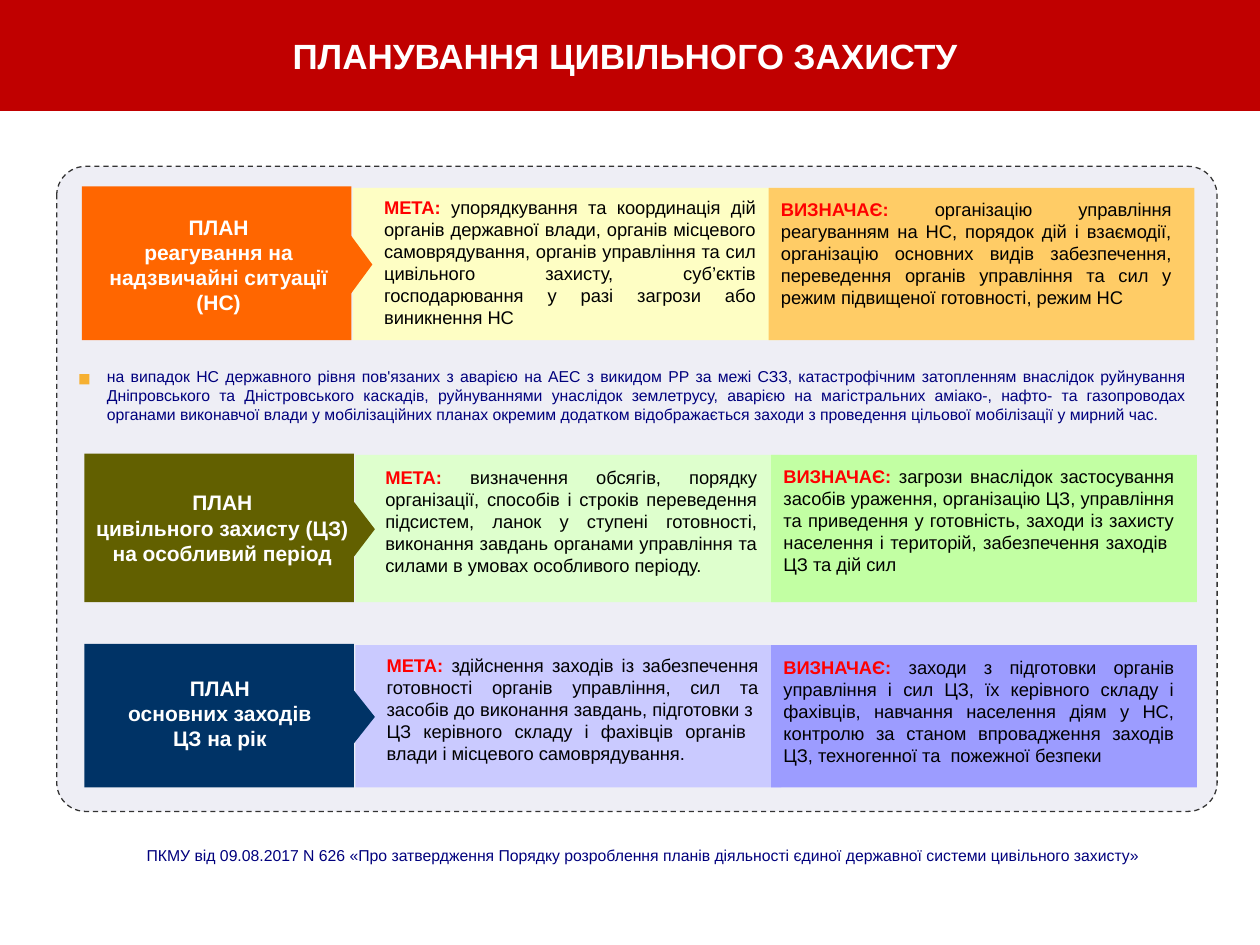
from pptx import Presentation
from pptx.dml.color import RGBColor
from pptx.enum.dml import MSO_LINE
from pptx.enum.shapes import MSO_SHAPE
from pptx.enum.text import MSO_ANCHOR, PP_ALIGN
from pptx.oxml import parse_xml
from pptx.oxml.ns import nsdecls, qn
from pptx.util import Inches, Pt
from lxml import etree

RECT, ROUNDED, TRIANGLE = MSO_SHAPE.RECTANGLE, MSO_SHAPE.ROUNDED_RECTANGLE, MSO_SHAPE.ISOSCELES_TRIANGLE
CENTER, JUSTIFY = PP_ALIGN.CENTER, PP_ALIGN.JUSTIFY
NAVY, RED, WHITE, BLACK = "00007D", "FF0000", "FFFFFF", "000000"

# Content
TITLE = "ПЛАНУВАННЯ ЦИВІЛЬНОГО ЗАХИСТУ "
NOTE = ("на випадок НС державного рівня пов'язаних з аварією на АЕС з викидом РР за межі СЗЗ, "
        "катастрофічним затопленням внаслідок руйнування Дніпровського та Дністровського каскадів, "
        "руйнуваннями унаслідок землетрусу, аварією на магістральних аміако-, нафто- та газопроводах "
        "органами виконавчої влади у мобілізаційних планах окремим додатком відображається заходи "
        "з проведення цільової мобілізації у мирний час.")
SOURCE = (" ПКМУ від 09.08.2017 N 626 «Про затвердження Порядку розроблення планів діяльності "
          "єдиної державної системи цивільного захисту»")
PLANS = [
    {"left": 0.65, "top": 1.48, "height": 1.22, "colors": ("FF6600", "FEFEC4", "FFCC66"),
     "label": ["ПЛАН", "реагування на", "надзвичайні ситуації", "(НС)"],
     "label_at": (0.48, 1.65), "goal_at": (2.95, 1.51), "scope_top": 1.52,
     "goal": " упорядкування та координація дій органів державної влади, органів місцевого "
             "самоврядування, органів управління та сил цивільного захисту, суб’єктів "
             "господарювання у разі загрози або виникнення НС",
     "scope": " організацію управління реагуванням на НС, порядок дій і взаємодії, організацію "
              "основних видів забезпечення, переведення органів управління та сил у режим "
              "підвищеної готовності, режим НС"},
    {"left": 0.67, "top": 3.6, "height": 1.18, "colors": ("626000", "DEFFCD", "C2FFA3"),
     "label": ["ПЛАН", "цивільного захисту (ЦЗ)", "на особливий період"],
     "label_at": (0.51, 3.84), "goal_at": (2.96, 3.65), "scope_top": 3.64,
     "goal": " визначення обсягів, порядку організації, способів і строків переведення підсистем, "
             "ланок у ступені готовності, виконання завдань органами управління та силами "
             "в умовах особливого періоду. ",
     "scope": " загрози внаслідок застосування засобів ураження, організацію ЦЗ, управління та "
              "приведення у готовність, заходи із захисту населення і територій, забезпечення "
              "заходів  ЦЗ та дій сил"},
    {"left": 0.67, "top": 5.11, "height": 1.14, "colors": ("003366", "CACAFF", "9C9CFF"),
     "label": ["ПЛАН", "основних заходів", "ЦЗ на рік"],
     "label_at": (0.49, 5.31), "goal_at": (2.97, 5.14), "scope_top": 5.16,
     "goal": " здійснення заходів із забезпечення готовності органів управління, сил та засобів "
             "до виконання завдань, підготовки з  ЦЗ керівного складу і фахівців органів  "
             "влади і місцевого самоврядування. ",
     "scope": " заходи з підготовки органів управління і сил ЦЗ, їх керівного складу і фахівців, "
              "навчання населення діям у НС, контролю за станом впровадження заходів ЦЗ, "
              "техногенної та  пожежної безпеки"},
]


def rgb(color):
    return RGBColor.from_string(color)


def style(span, size, color, bold=False):
    span.font.name = "Arial"
    span.font.size = Pt(size)
    span.font.bold = bold
    span.font.color.rgb = rgb(color)


def add_block(kind, left, top, width, height, color):
    block = page.shapes.add_shape(kind, Inches(left), Inches(top), Inches(width), Inches(height))
    block.shadow.inherit = False
    block.fill.solid()
    block.fill.fore_color.rgb = rgb(color)
    block.line.fill.background()
    return block


def add_text(left, top, width, height, paragraphs, size, align):
    """Each paragraph is a list of (text, color, bold) spans."""
    box = page.shapes.add_textbox(Inches(left), Inches(top), Inches(width), Inches(height))
    frame = box.text_frame
    frame.word_wrap = True
    for index, spans in enumerate(paragraphs):
        para = frame.paragraphs[0] if index == 0 else frame.add_paragraph()
        para.alignment = align
        for text, color, bold in spans:
            span = para.add_run()
            span.text = text
            style(span, size, color, bold)
    return box


def add_text_shadow(box):
    for para in box.text_frame.paragraphs:
        for span in para.runs:
            shadow = parse_xml(
                f'<a:effectLst {nsdecls("a")}><a:outerShdw dist="25400" dir="2700000" algn="tl">'
                '<a:srgbClr val="000000"/></a:outerShdw></a:effectLst>')
            span.font._element.find(qn("a:solidFill")).addnext(shadow)


deck = Presentation()
deck.slide_width, deck.slide_height = Inches(10), Inches(7.5)
page = deck.slides.add_slide(deck.slide_layouts[5])

# Title band
title = page.shapes.title
title.left, title.top, title.width, title.height = Inches(0), Inches(0), Inches(10), Inches(0.88)
title.fill.solid()
title.fill.fore_color.rgb = rgb("C00000")
title.text_frame.text = TITLE
title.text_frame.vertical_anchor = MSO_ANCHOR.MIDDLE
title.text_frame.paragraphs[0].alignment = CENTER
style(title.text_frame.paragraphs[0].runs[0], 20, WHITE, True)

# Dashed panel, 70 % opaque
panel = add_block(ROUNDED, 0.45, 1.32, 9.21, 5.12, "E8E8F1")
panel.adjustments[0] = 0.045
panel.line.color.rgb = rgb("333333")
panel.line.width = Pt(0.75)
panel.line.dash_style = MSO_LINE.DASH
panel_color = panel._element.spPr.find(qn("a:solidFill"))[0]
etree.SubElement(panel_color, qn("a:alpha")).set("val", "70000")

# Plans: label with pointer, goal, scope
LABEL_WIDTH, CELL_WIDTH, POINTER_DEPTH = 2.14, 3.38, 0.21
for plan in PLANS:
    left, top, height = plan["left"], plan["top"], plan["height"]
    label_color, goal_color, scope_color = plan["colors"]
    goal_left = left + LABEL_WIDTH + 0.01
    scope_left = left + 5.45
    add_block(RECT, goal_left, top + 0.01, CELL_WIDTH, height - 0.01, goal_color)
    add_block(RECT, scope_left, top + 0.01, CELL_WIDTH, height - 0.01, scope_color)
    add_block(RECT, left, top, LABEL_WIDTH, height, label_color)

    pointer_span = round(height * 0.467, 2)
    pointer = add_block(TRIANGLE, left + LABEL_WIDTH + 0.06 - pointer_span / 2,
                        top + height / 2 + 0.01 - POINTER_DEPTH / 2,
                        pointer_span, POINTER_DEPTH, label_color)
    pointer.rotation = 90

    lines = [[(line, WHITE, True)] for line in plan["label"]]
    add_text_shadow(add_text(*plan["label_at"], 2.51, 0.1 + 0.2 * len(lines), lines, 12, CENTER))
    add_text(*plan["goal_at"], 3.15, 0.97,
             [[("МЕТА:", RED, True), (plan["goal"], BLACK, False)]], 10.5, JUSTIFY)
    add_text(scope_left, plan["scope_top"], 3.3, 0.97,
             [[("ВИЗНАЧАЄ:", RED, True), (plan["scope"], BLACK, False)]], 10.5, JUSTIFY)

# Note with its square marker, and the legal source
add_text(0.75, 2.86, 8.75, 0.55, [[(NOTE, NAVY, False)]], 9, JUSTIFY)
add_block(RECT, 0.63, 2.97, 0.08, 0.08, "F6B032")
add_text(1.03, 6.66, 8.32, 0.25, [[(SOURCE, NAVY, False)]], 9, JUSTIFY)

deck.save("out.pptx")
